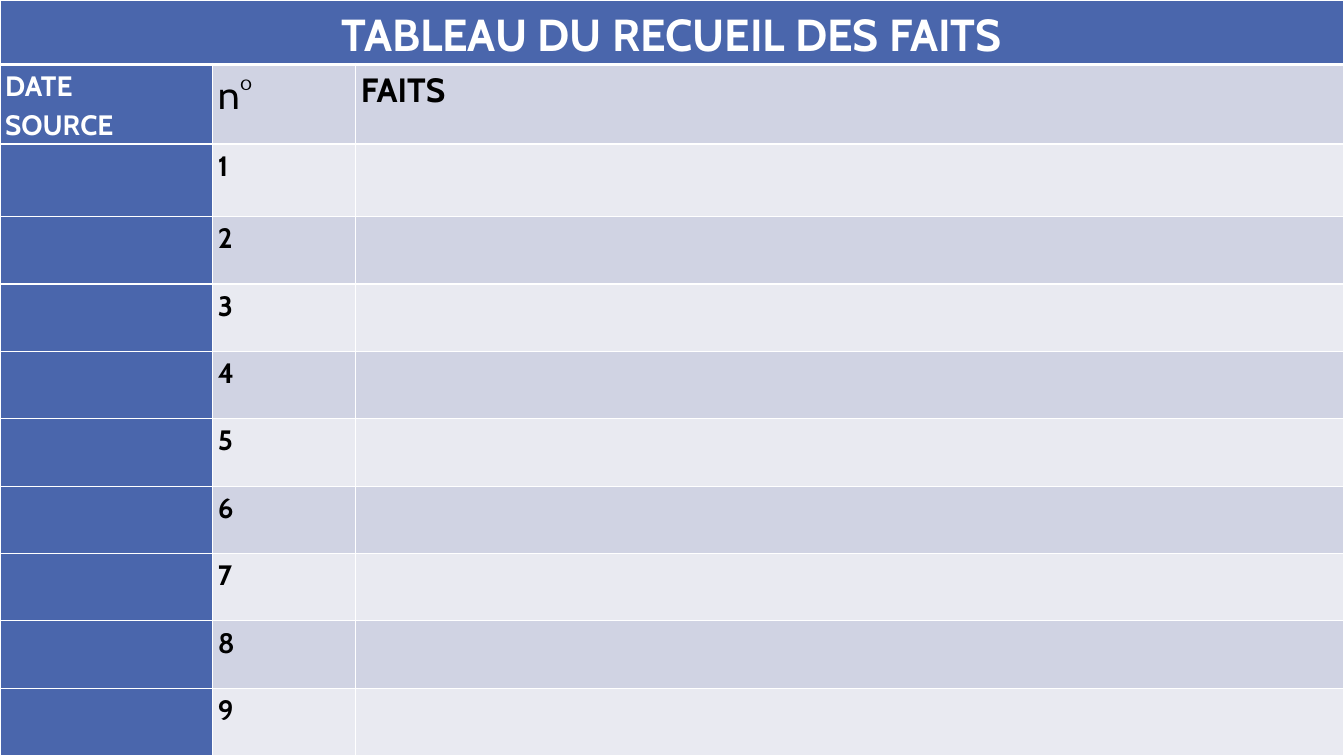
from dataclasses import dataclass

from lxml import etree
from pptx import Presentation
from pptx import util as u
from pptx.dml.color import RGBColor
from pptx.enum import text
from pptx.oxml import ns


@dataclass(frozen=True)
class Theme:
    font: str = "Cabin"
    blue: str = "4A66AC"
    dark_band: str = "D0D3E3"
    light_band: str = "E9EAF1"
    white: str = "FFFFFF"
    black: str = "000000"
    title_size: int = 32
    symbol_size: int = 28
    heading_size: int = 24
    body_size: int = 20
    line_spacing: float = 1.15
    thin_border: int = 1
    thick_border: int = 3


class SlideBuilder:
    def __init__(self, presentation, theme):
        self.width = presentation.slide_width
        self.height = presentation.slide_height
        self.theme = theme
        self.slide = presentation.slides.add_slide(presentation.slide_layouts[6])

    def table(self, column_shares, row_shares):
        """Add a full-slide table; shares are percentages of the slide."""
        shape = self.slide.shapes.add_table(
            len(row_shares), len(column_shares), 0, 0, self.width, self.height)
        table = shape.table
        table.first_row = table.horz_banding = False
        for column, share in zip(table.columns, column_shares):
            column.width = round(self.width * share / 100)
        for row, share in zip(table.rows, row_shares):
            row.height = round(self.height * share / 100)
        return table

    def cell(self, cell, fill, words="", centred=False, top=1, bottom=1, **font):
        margins = dict(margin_left=u.Inches(0.05), margin_right=u.Inches(0.05),
                       margin_top=0, margin_bottom=0)
        for name, value in margins.items():
            setattr(cell, name, value)
        cell.fill.solid()
        cell.fill.fore_color.rgb = RGBColor.from_string(fill)
        self.borders(cell, top, bottom)
        cell.text = words
        for paragraph in cell.text_frame.paragraphs:
            paragraph.line_spacing = self.theme.line_spacing
            if centred:
                paragraph.alignment = text.PP_ALIGN.CENTER
            self.format_font(paragraph.font, **font)
            for run in paragraph.runs:
                self.format_font(run.font, **font)

    def format_font(self, font, size=None, color=None, bold=True):
        values = dict(name=self.theme.font, bold=bold,
                      size=u.Pt(size or self.theme.body_size))
        for name, value in values.items():
            setattr(font, name, value)
        font.color.rgb = RGBColor.from_string(color or self.theme.black)

    def borders(self, cell, top, bottom):
        properties = cell._tc.get_or_add_tcPr()
        thin = self.theme.thin_border
        widths = dict(lnL=thin, lnR=thin, lnT=top, lnB=bottom)
        for index, (side, points) in enumerate(widths.items()):
            line = etree.Element(ns.qn(f"a:{side}"), w=str(u.Pt(points)))
            fill = etree.SubElement(line, ns.qn("a:solidFill"))
            etree.SubElement(fill, ns.qn("a:srgbClr"), val=self.theme.white)
            properties.insert(index, line)


def build_facts_table(builder, fact_count=9):
    theme = builder.theme
    top_rows = [8.53, 10.53, 9.6]
    other_facts = fact_count - 1
    fact_rows = [(100 - sum(top_rows)) / other_facts] * other_facts
    table = builder.table([15.83, 10.65, 73.52], top_rows + fact_rows)

    table.cell(0, 0).merge(table.cell(0, 2))
    for column in range(3):
        builder.cell(table.cell(0, column), theme.blue,
                     "" if column else "TABLEAU DU RECUEIL DES FAITS",
                     centred=True, bottom=theme.thick_border,
                     size=theme.title_size, color=theme.white)

    headings = [
        (theme.blue, "DATE\nSOURCE", dict(color=theme.white)),
        (theme.dark_band, "n°", dict(size=theme.symbol_size, bold=False)),
        (theme.dark_band, "FAITS", dict(size=theme.heading_size)),
    ]
    for column, (fill, words, font) in enumerate(headings):
        builder.cell(table.cell(1, column), fill, words,
                     top=theme.thick_border, **font)

    for number in range(1, fact_count + 1):
        band = theme.light_band if number % 2 else theme.dark_band
        fact = [(theme.blue, ""), (band, str(number)), (band, "")]
        for column, (fill, words) in enumerate(fact):
            builder.cell(table.cell(number + 1, column), fill, words)


def main():
    presentation = Presentation()
    presentation.slide_width = u.Inches(13.33)
    presentation.slide_height = u.Inches(7.5)
    build_facts_table(SlideBuilder(presentation, Theme()))
    presentation.save("out.pptx")


if __name__ == "__main__":
    main()
